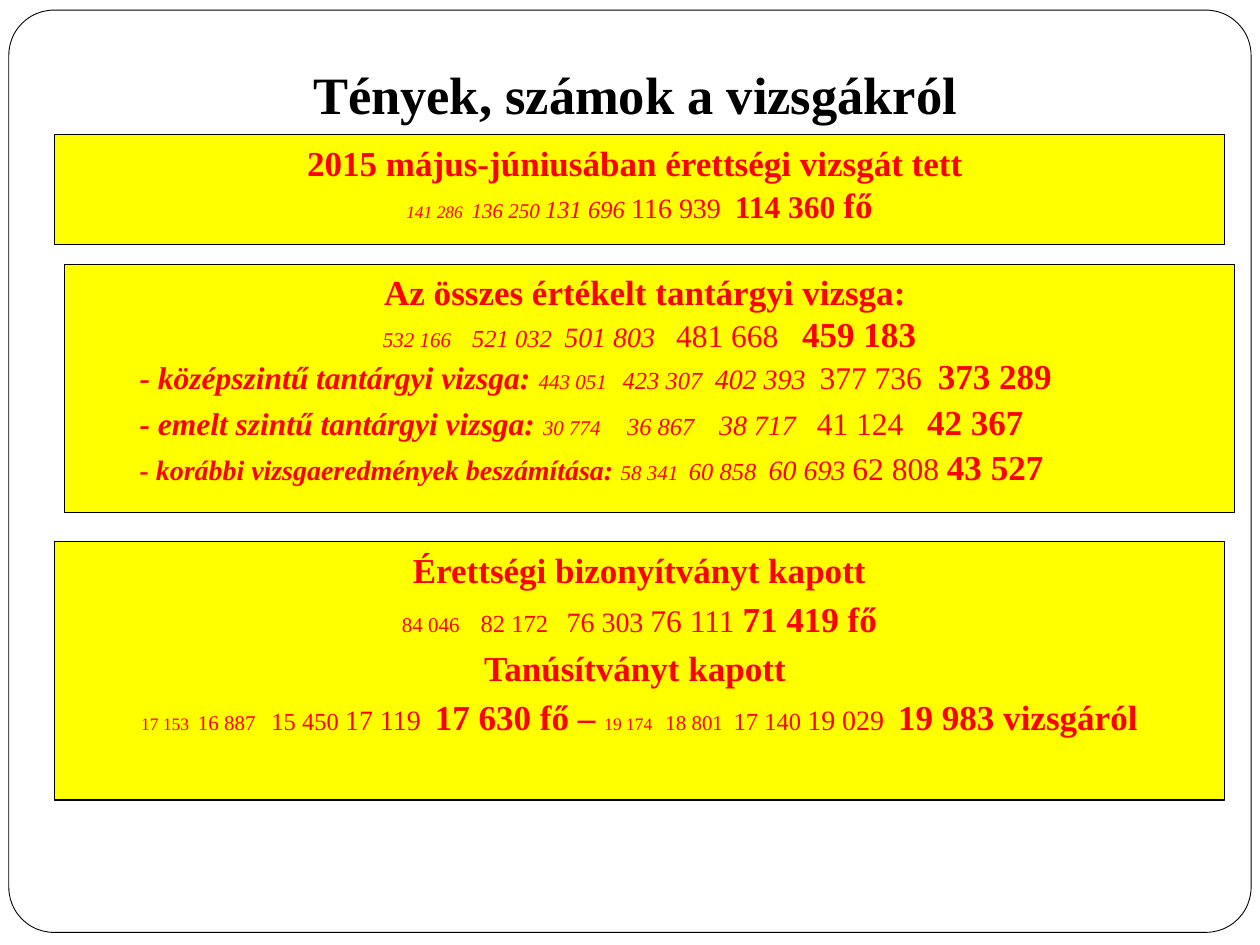
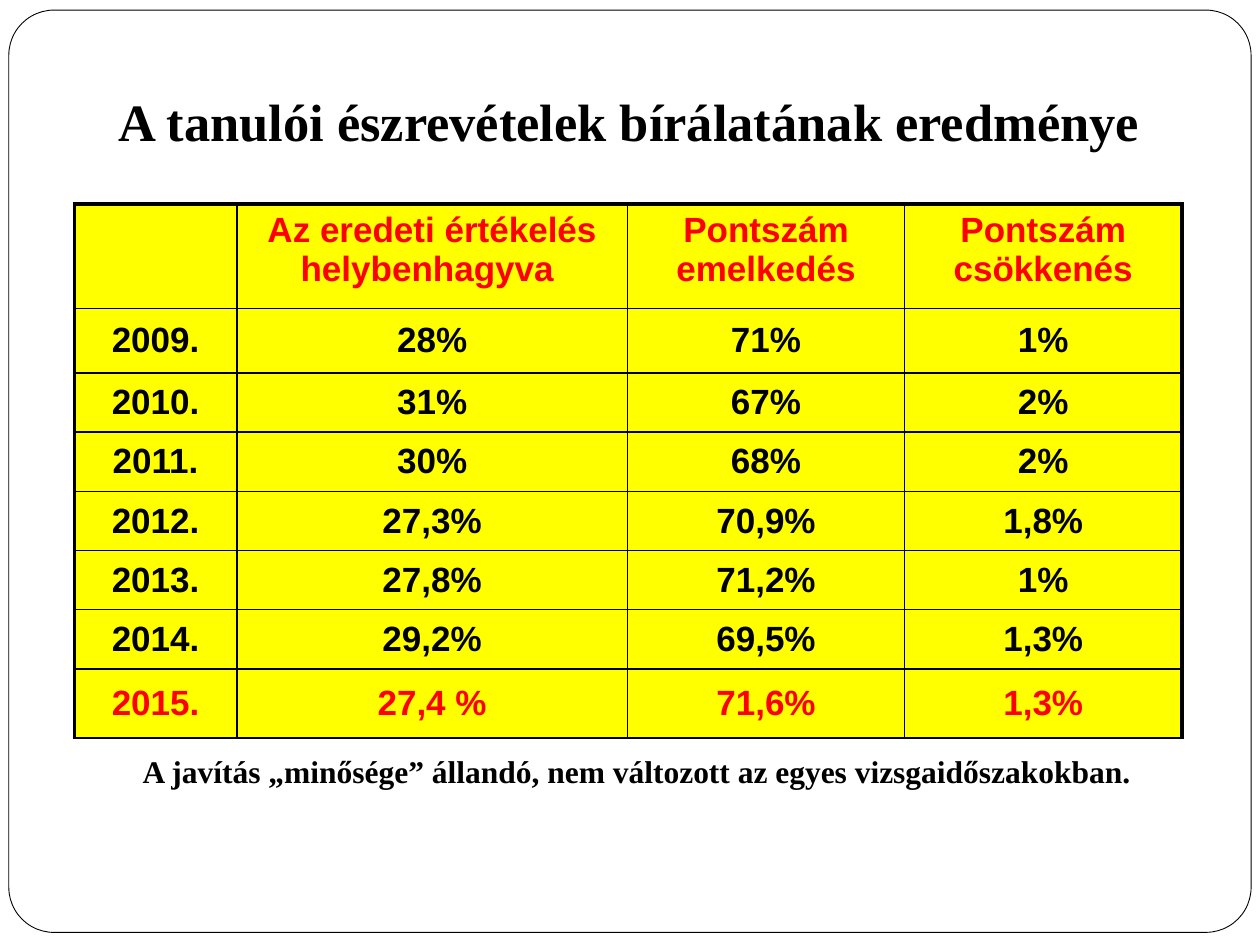
from lxml.etree import SubElement
from pptx import Presentation
from pptx.dml.color import RGBColor
from pptx.enum.shapes import MSO_SHAPE
from pptx.enum.text import MSO_ANCHOR, MSO_AUTO_SIZE, PP_ALIGN
from pptx.oxml import parse_xml
from pptx.oxml.ns import nsdecls, qn
from pptx.util import Inches, Pt

BLACK, WHITE, RED, YELLOW = "000000", "FFFFFF", "FF0000", "FFFF00"
SERIF, SANS = "Times New Roman", "Arial"
TITLE_ONLY = 5
SPACE_WIDTH = 0.25  # width of a serif space, in ems


def color(value):
    return RGBColor.from_string(value)


class Deck:
    """Holds the presentation, its shared style and the current slide."""

    def __init__(self):
        self.presentation = Presentation()
        self.presentation.slide_width = Inches(10)
        self.presentation.slide_height = Inches(7.5)
        self.layout = self.presentation.slide_layouts[TITLE_ONLY]
        self.slide = None

    def add_slide(self, title, box):
        first = self.slide is None
        self.slide = self.presentation.slides.add_slide(self.layout)
        if first:
            self.add_frame_to_layout()
        shape = self.slide.shapes.title
        shape.left, shape.top, shape.width, shape.height = map(Inches, box)
        frame = shape.text_frame
        frame.auto_size = MSO_AUTO_SIZE.NONE
        frame.vertical_anchor = MSO_ANCHOR.MIDDLE
        paragraph = frame.paragraphs[0]
        paragraph.alignment = PP_ALIGN.CENTER
        self.run(paragraph, title, 30, "b", BLACK)

    def add_frame_to_layout(self):
        frame = self.shape(MSO_SHAPE.ROUNDED_RECTANGLE, (0.07, 0.08, 9.86, 7.32), WHITE, 0.5)
        frame.adjustments[0] = 0.049
        frame.element.nvSpPr.cNvPr.set("id", "20")
        self.layout.shapes.element.insert(2, frame.element)

    def shape(self, kind, box, fill, line_width):
        shape = self.slide.shapes.add_shape(kind, *map(Inches, box))
        shape.shadow.inherit = False
        shape.fill.solid()
        shape.fill.fore_color.rgb = color(fill)
        shape.line.color.rgb = color(BLACK)
        shape.line.width = Pt(line_width)
        return shape

    def run(self, paragraph, text, size, style, text_color, font=SERIF):
        run = paragraph.add_run()
        run.text = text
        run.font.name = font
        run.font.size = Pt(size)
        run.font.bold = "b" in style
        run.font.italic = "i" in style
        run.font.color.rgb = color(text_color)
        return run

    def gap(self, paragraph, size, style, spaces):
        """One space, widened by letter spacing to the given number of spaces."""
        run = self.run(paragraph, " ", size, style, RED)
        extra = (spaces - 1) * SPACE_WIDTH * size
        run.font._element.set("spc", str(round(extra * 100)))

    def panel(self, box, lines):
        frame = self.shape(MSO_SHAPE.RECTANGLE, box, YELLOW, 0.75).text_frame
        frame.word_wrap = True
        frame.vertical_anchor = MSO_ANCHOR.TOP
        for index, (level, space_before, runs) in enumerate(lines):
            paragraph = frame.add_paragraph() if index else frame.paragraphs[0]
            paragraph.level = level
            paragraph.alignment = PP_ALIGN.LEFT if level else PP_ALIGN.CENTER
            paragraph.space_before = Pt(space_before)
            margin, indent = (0.81, -0.31) if level else (0.38, -0.38)
            properties = paragraph._p.get_or_add_pPr()
            properties.set("marL", str(Inches(margin)))
            properties.set("indent", str(Inches(indent)))
            for text, size, style, *spaces in runs:
                self.run(paragraph, text, size, style, RED)
                if spaces:
                    self.gap(paragraph, size, style, spaces[0])

    def caption(self, text, box):
        frame = self.slide.shapes.add_textbox(*map(Inches, box)).text_frame
        frame.word_wrap = True
        frame.auto_size = MSO_AUTO_SIZE.SHAPE_TO_FIT_TEXT
        paragraph = frame.paragraphs[0]
        paragraph.alignment = PP_ALIGN.CENTER
        paragraph.line_spacing = 0.9
        paragraph.space_before = Pt(3.6)
        self.run(paragraph, text, 18, "b", BLACK)

    def table(self, box, widths, heights, rows):
        table = self.slide.shapes.add_table(len(rows), len(widths), *map(Inches, box)).table
        table.first_row = table.horz_banding = False
        for column, width in zip(table.columns, widths):
            column.width = Inches(width)
        for row, height in zip(table.rows, heights):
            row.height = Inches(height)
        last_row, last_column = len(rows) - 1, len(widths) - 1
        for r, texts in enumerate(rows):
            for c, text in enumerate(texts):
                cell = table.cell(r, c)
                cell.fill.solid()
                cell.fill.fore_color.rgb = color(YELLOW)
                cell.vertical_anchor = MSO_ANCHOR.MIDDLE if r else MSO_ANCHOR.TOP
                self.borders(cell, L=c == 0, R=c == last_column, T=r == 0, B=False)
                if text:
                    paragraph = cell.text_frame.paragraphs[0]
                    paragraph.alignment = PP_ALIGN.CENTER
                    paragraph.space_before = Pt(4)
                    text_color = RED if r in (0, last_row) else BLACK
                    self.run(paragraph, text, 20, "b", text_color, SANS)

    def borders(self, cell, **thick_sides):
        properties = cell._tc.get_or_add_tcPr()
        for index, (side, thick) in enumerate(thick_sides.items()):
            width = Pt(2.25 if thick else 1)
            line = parse_xml(f'<a:ln{side} {nsdecls("a")} w="{width}"/>')
            fill = SubElement(line, qn("a:solidFill"))
            SubElement(fill, qn("a:srgbClr"), val=BLACK)
            properties.insert(index, line)


def figures_slide(deck):
    deck.add_slide("Tények, számok a vizsgákról ", (1.14, 0.28, 7.91, 0.93))

    # Each line: level, space before, runs of (text, size, style, width of gap after)
    deck.panel((0.43, 1.07, 9.29, 0.87), [
        (0, 0, [("2015 május-júniusában érettségi vizsgát tett ", 20, "b")]),
        (0, 0, [("141 286", 10, "i", 2), ("136 250 ", 12, "i"), ("131 696 ", 14, "i"),
                ("116 939", 16, "", 2), ("114 360 ", 18, "b"), ("fő", 20, "b")]),
    ])

    # Certificates
    deck.panel((0.43, 4.3, 9.29, 2.05), [
        (0, 4, [("Érettségi bizonyítványt kapott", 20, "b")]),
        (0, 4, [("84 046", 12, "", 4), ("82 172", 14, "", 3), ("76 303 ", 16, ""),
                ("76 111 ", 18, ""), ("71 419 fő", 20, "b")]),
        (0, 4, [("Tanúsítványt kapott ", 20, "b")]),
        (0, 4, [("17 153", 10, "", 2), ("16 887", 12, "", 3), ("15 450 ", 14, ""),
                ("17 119", 16, "", 2), ("17 630 fő – ", 20, "b"),
                ("19 174", 10, "", 3), ("18 801", 12, "", 2), ("17 140 ", 14, ""),
                ("19 029", 16, "", 2), ("19 983 vizsgáról", 20, "b")]),
    ])

    # Subject exams
    deck.panel((0.51, 2.1, 9.29, 1.97), [
        (0, 0, [("Az összes értékelt tantárgyi vizsga: ", 20, "b")]),
        (0, 0, [("532 166", 12, "i", 4), ("521 032", 14, "i", 2), ("501 803", 16, "i", 3),
                ("481 668", 18, "", 3), ("459 183", 20, "b")]),
        (1, 0, [("- középszintű tantárgyi vizsga: ", 18, "bi"), ("443 051", 12, "i", 3),
                ("423 307", 14, "i", 2), ("402 393", 16, "i", 2),
                ("377 736", 18, "", 2), ("373 289", 20, "b")]),
        (1, 2, [("- emelt szintű tantárgyi vizsga: ", 18, "bi"), ("30 774", 12, "i", 5),
                ("36 867", 14, "i", 4), ("38 717", 16, "i", 3),
                ("41 124", 18, "", 3), ("42 367", 20, "b")]),
        (1, 2, [("- korábbi vizsgaeredmények beszámítása: ", 16, "bi"), ("58 341", 12, "i", 2),
                ("60 858", 14, "i", 2), ("60 693 ", 16, "i"),
                ("62 808 ", 18, ""), ("43 527", 20, "b")]),
    ])


def reviews_slide(deck):
    deck.add_slide("A tanulói észrevételek bírálatának eredménye", (0.27, 0.6, 9.45, 0.71))
    deck.caption("A javítás „minősége” állandó, nem változott az egyes vizsgaidőszakokban.",
                 (0.35, 5.95, 9.41, 0.37))
    deck.table((0.59, 1.62, 8.78, 4.25), [1.29, 3.1, 2.2, 2.2],
               [0.83, 0.51] + [0.47] * 5 + [0.55], [
        ("", "Az eredeti értékelés helybenhagyva ", "Pontszám emelkedés", "Pontszám csökkenés"),
        ("2009.", "28%", "71%", "1%"),
        ("2010.", "31%", "67%", "2%"),
        ("2011.", "30%", "68%", "2%"),
        ("2012.", "27,3%", "70,9%", "1,8%"),
        ("2013.", "27,8%", "71,2%", "1%"),
        ("2014.", "29,2%", "69,5%", "1,3%"),
        ("2015.", "27,4 %", "71,6%", "1,3%"),
    ])


def main():
    deck = Deck()
    figures_slide(deck)
    reviews_slide(deck)
    deck.presentation.save("out.pptx")


if __name__ == "__main__":
    main()
